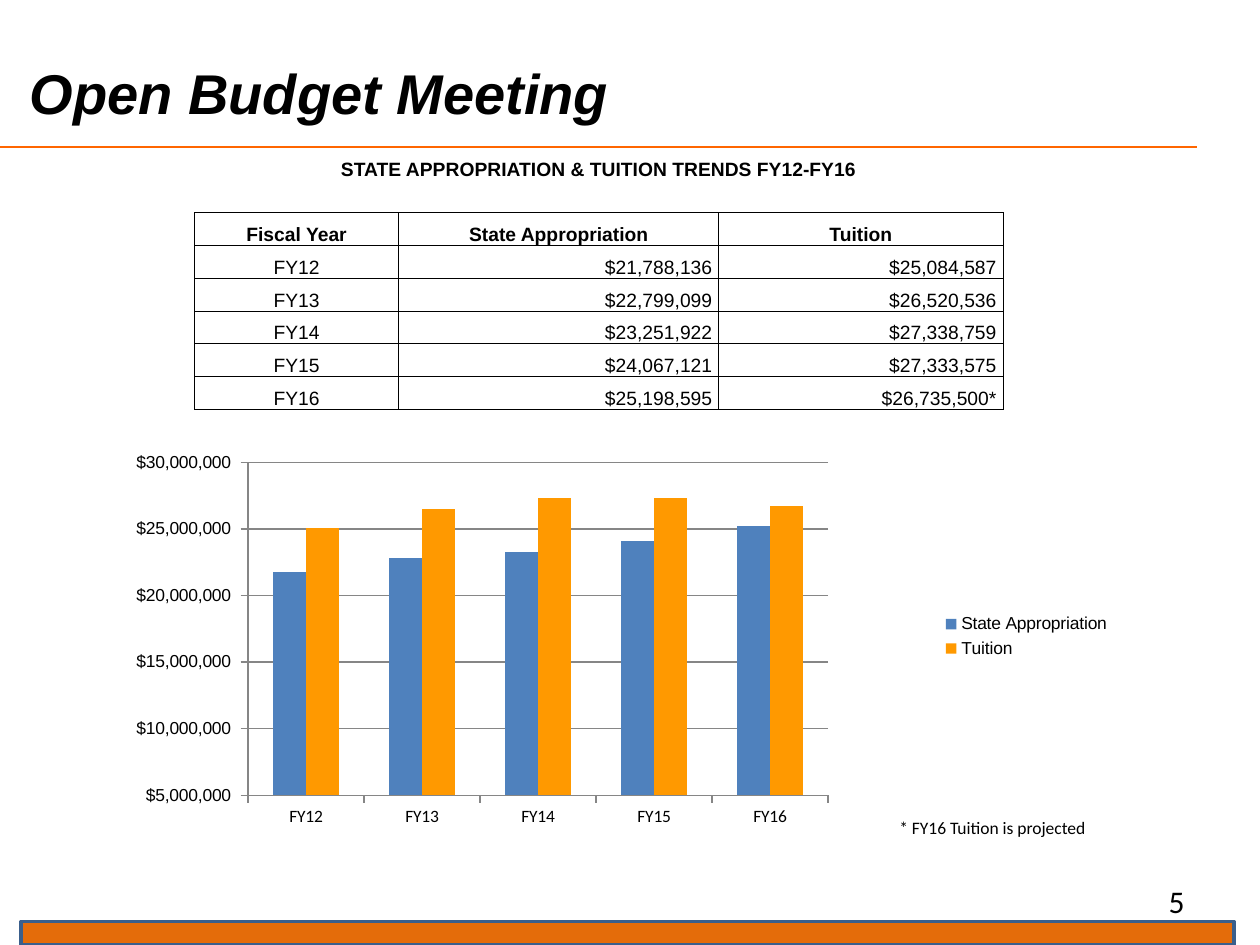
import pptx
import pptx.chart.data
import pptx.dml.color
import pptx.enum.chart
import pptx.enum.shapes
import pptx.enum.text
import pptx.oxml
import pptx.oxml.ns
import pptx.util
from dataclasses import dataclass

Cm, Pt = pptx.util.Cm, pptx.util.Pt
ALIGN, ANCHOR = pptx.enum.text.PP_ALIGN, pptx.enum.text.MSO_ANCHOR

# Content
TITLE = "Open Budget Meeting"
TABLE_TITLE = "STATE APPROPRIATION & TUITION TRENDS FY12-FY16"
HEADERS = ["Fiscal Year", "State Appropriation", "Tuition"]
BUDGET = [
    ("FY12", 21788136, 25084587),
    ("FY13", 22799099, 26520536),
    ("FY14", 23251922, 27338759),
    ("FY15", 24067121, 27333575),
    ("FY16", 25198595, 26735500),
]
PROJECTED = ("FY16", "Tuition")
FOOTNOTE = "* FY16 Tuition is projected"
PAGE_NUMBER = "5"


@dataclass
class Theme:
    heading: str = "Arial"
    body: str = "Calibri"
    ink: str = "000000"
    rule: str = "FF6600"
    band: str = "E46C0A"
    band_line: str = "3A5F8C"
    grid: str = "868686"
    series: tuple = ("4F81BD", "FF9900")
    title_size: int = 32
    number_size: int = 18
    table_size: int = 11
    small_size: int = 10


theme = Theme()


def rgb(value):
    return pptx.dml.color.RGBColor.from_string(value)


def set_font(font, name, size, bold=False, italic=False):
    font.name, font.size, font.bold, font.italic = name, Pt(size), bold, italic
    font.color.rgb = rgb(theme.ink)


def write(para, text, align, *style):
    para.alignment = align
    span = para.add_run()
    span.text = text
    set_font(span.font, *style)


def add_text(page, place, text, align, anchor, *style):
    box = page.shapes.add_textbox(*map(Cm, place))
    box.text_frame.word_wrap = True
    box.text_frame.vertical_anchor = anchor
    write(box.text_frame.paragraphs[0], text, align, *style)


def set_borders(cell, edges):
    """Draw the named edges (L, R, T, B) and clear the others."""
    properties = cell._tc.get_or_add_tcPr()
    namespace = pptx.oxml.ns.nsdecls("a")
    for index, edge in enumerate("LRTB"):
        paint = (f'<a:solidFill><a:srgbClr val="{theme.ink}"/></a:solidFill>'
                 if edge in edges else "<a:noFill/>")
        properties.insert(index, pptx.oxml.parse_xml(
            f'<a:ln{edge} {namespace} w="6350">{paint}</a:ln{edge}>'))


def add_rule_and_band(page):
    rule = page.shapes.add_connector(
        pptx.enum.shapes.MSO_CONNECTOR.STRAIGHT, 0, Cm(2.96), Cm(24.13), Cm(2.96))
    rule.line.color.rgb = rgb(theme.rule)
    rule.line.width = Pt(1.5)
    rule._element.spPr.append(pptx.oxml.parse_xml(
        f'<a:effectLst {pptx.oxml.ns.nsdecls("a")}/>'))

    band = page.shapes.add_shape(
        pptx.enum.shapes.MSO_SHAPE.RECTANGLE, Cm(0.42), Cm(18.58), Cm(24.46), Cm(0.47))
    band.shadow.inherit = False
    band.fill.solid()
    band.fill.fore_color.rgb = rgb(theme.band)
    band.line.color.rgb = rgb(theme.band_line)
    band.line.width = Pt(2)


def add_title(page):
    title = page.shapes.title
    title.left, title.top, title.width, title.height = map(Cm, (0.03, 1.07, 15.44, 1.27))
    frame = title.text_frame
    frame.vertical_anchor = ANCHOR.TOP
    frame.margin_left, frame.margin_top = Cm(0.57), Cm(0.11)
    frame.margin_bottom = 0
    write(frame.paragraphs[0], TITLE, ALIGN.LEFT,
          theme.heading, theme.title_size, True, True)


def add_budget_table(page):
    # Title row, spacer row, header row, then one row per year
    rows = [[TABLE_TITLE, "", ""], ["", "", ""], HEADERS]
    for year, *amounts in BUDGET:
        rows.append([year] + [
            f"${amount:,}" + ("*" if (year, name) == PROJECTED else "")
            for name, amount in zip(HEADERS[1:], amounts)])
    widths, row_height, header_row = (4.12, 6.45, 5.73), 0.66, 2

    table = page.shapes.add_table(
        len(rows), len(widths), Cm(3.92), Cm(2.97),
        Cm(sum(widths)), Cm(row_height * len(rows))).table
    table.first_row = table.horz_banding = False
    for column, width in zip(table.columns, widths):
        column.width = Cm(width)
    table.cell(0, 0).merge(table.cell(0, len(widths) - 1))

    for r, texts in enumerate(rows):
        table.rows[r].height = Cm(row_height)
        for c, text in enumerate(texts):
            cell = table.cell(r, c)
            is_amount = r > header_row and c > 0
            cell.margin_left = cell.margin_top = Cm(0.03)
            cell.margin_right = Cm(0.13 if is_amount else 0.03)
            cell.margin_bottom = 0
            cell.vertical_anchor = ANCHOR.BOTTOM
            cell.fill.background()
            set_borders(cell, ("", "B", "LRTB")[min(r, header_row)])
            para = cell.text_frame.paragraphs[0]
            if text:
                write(para, text, ALIGN.RIGHT if is_amount else ALIGN.CENTER,
                      theme.heading, theme.table_size, r <= header_row)
            else:
                para._p.append(pptx.oxml.parse_xml(
                    f'<a:endParaRPr {pptx.oxml.ns.nsdecls("a")} sz="{theme.table_size * 100}"/>'))


def add_budget_chart(page):
    data = pptx.chart.data.CategoryChartData()
    years, *columns = zip(*BUDGET)
    data.categories = years
    for name, values in zip(HEADERS[1:], columns):
        data.add_series(name, [round(value, -5) for value in values])
    chart = page.shapes.add_chart(
        pptx.enum.chart.XL_CHART_TYPE.COLUMN_CLUSTERED,
        Cm(2.75), Cm(9.1), Cm(19.89), Cm(7.57), data).chart
    chart.has_title = False
    set_font(chart.font, theme.body, theme.small_size)

    # Columns
    plot = chart.plots[0]
    plot.gap_width, plot.overlap, plot.vary_by_categories = 150, 0, False
    for series, color in zip(plot.series, theme.series):
        series.format.fill.solid()
        series.format.fill.fore_color.rgb = rgb(color)

    # Axes
    amounts = chart.value_axis
    amounts.minimum_scale = amounts.major_unit = 5000000
    amounts.maximum_scale = 30000000
    amounts.has_major_gridlines = True
    amounts.tick_labels.number_format = '"$"#,##0_);\\("$"#,##0\\)'
    amounts.tick_labels.number_format_is_linked = False
    set_font(amounts.tick_labels.font, theme.heading, theme.small_size)
    set_font(chart.category_axis.tick_labels.font, theme.body, theme.small_size)
    for line in (amounts.format.line, amounts.major_gridlines.format.line,
                 chart.category_axis.format.line):
        line.color.rgb = rgb(theme.grid)
        line.width = Pt(0.75)

    # Legend and plot area
    chart.has_legend = True
    chart.legend.position = pptx.enum.chart.XL_LEGEND_POSITION.RIGHT
    chart.legend.include_in_layout = False
    set_font(chart.legend.font, theme.heading, theme.small_size)
    area = chart._chartSpace.chart.plotArea
    for layout in area.findall(pptx.oxml.ns.qn("c:layout")):
        area.remove(layout)
    area.insert(0, pptx.oxml.parse_xml(
        f'<c:layout {pptx.oxml.ns.nsdecls("c")}><c:manualLayout>'
        '<c:layoutTarget val="inner"/><c:xMode val="edge"/><c:yMode val="edge"/>'
        '<c:x val="0.11"/><c:y val="0.03"/><c:w val="0.59"/><c:h val="0.9"/>'
        '</c:manualLayout></c:layout>'))


def main():
    deck = pptx.Presentation()
    deck.slide_width, deck.slide_height = Cm(25.4), Cm(19.05)
    page = deck.slides.add_slide(deck.slide_layouts.get_by_name("Title Only"))
    add_rule_and_band(page)
    add_title(page)
    add_text(page, (18.21, 17.65, 5.92, 1.02), PAGE_NUMBER, ALIGN.RIGHT,
             ANCHOR.MIDDLE, theme.body, theme.number_size)
    add_text(page, (17.88, 16.34, 6.02, 0.69), FOOTNOTE, ALIGN.LEFT,
             ANCHOR.TOP, theme.body, theme.small_size)
    add_budget_table(page)
    add_budget_chart(page)
    deck.save("out.pptx")


if __name__ == "__main__":
    main()
